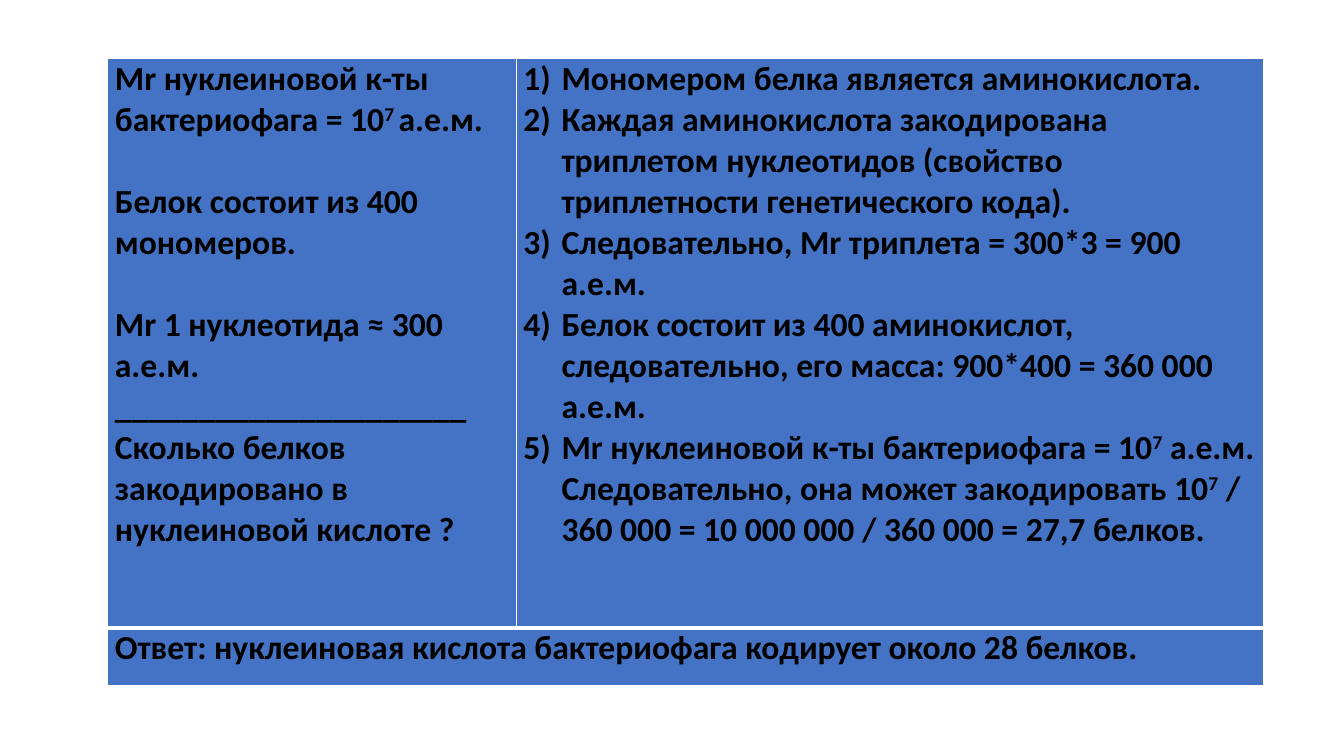
from pptx import Presentation
from pptx import util as u
from pptx.dml.color import RGBColor
from pptx.oxml.ns import qn
from lxml import etree

# Content: text between ^ marks is superscript
GIVEN = [  # (text, starts after a one-line gap)
    ("Mr нуклеиновой к-ты бактериофага = 10^7 ^а.е.м.", False),
    ("Белок состоит из 400 мономеров.", True),
    ("Mr 1 нуклеотида ≈ 300 а.е.м.", True),
    ("_____________________", False),
    ("Сколько белков закодировано в нуклеиновой кислоте ?", False),
]
STEPS = [
    "Мономером белка является аминокислота.",
    "Каждая аминокислота закодирована триплетом нуклеотидов "
    "(свойство триплетности генетического кода).",
    "Следовательно, Mr триплета = 300*3 = 900 а.е.м.",
    "Белок состоит из 400 аминокислот, следовательно, его масса: "
    "900*400 = 360 000 а.е.м.",
    "Mr нуклеиновой к-ты бактериофага = 10^7^ а.е.м. Следовательно, она может "
    "закодировать 10^7^ / 360 000 = 10 000 000 / 360 000 = 27,7 белков.",
]
ANSWER = "Ответ: нуклеиновая кислота бактериофага кодирует около 28 белков."

THEME = {"font": "Calibri", "size": u.Pt(24), "line": u.Pt(29.3),
         "text": RGBColor(0, 0, 0), "fill": RGBColor(0x44, 0x72, 0xC4),
         "border": "FFFFFF", "thin": u.Pt(1), "thick": u.Pt(3)}
LEFT, TOP = 1.07, 0.58
COLS, ROWS = (4.05, 7.41), (5.65, 0.57)
INDENT = u.Inches(0.38)


def add_line(tf, content, first):
    p = tf.paragraphs[0] if first else tf.add_paragraph()
    for i, part in enumerate(content.split("^")):
        r = p.add_run()
        r.text = part
        if i % 2:
            r._r.get_or_add_rPr().set("baseline", "30000")
    f = p.font
    f.name, f.size, f.bold = THEME["font"], THEME["size"], True
    f.color.rgb = THEME["text"]
    return p


def number(p):
    pPr = p._p.get_or_add_pPr()
    pPr.set("marL", str(INDENT))
    pPr.set("indent", str(-INDENT))
    bullet = etree.Element(qn("a:buAutoNum"), type="arabicParenR")
    pPr.insert(0, bullet)


def style_cell(cell, thick_side):
    cell.margin_left = cell.margin_right = u.Inches(0.07)
    cell.margin_top = cell.margin_bottom = 0
    tcPr = cell._tc.get_or_add_tcPr()
    for side in "LRTB":
        width = THEME["thick" if side == thick_side else "thin"]
        ln = etree.SubElement(tcPr, qn("a:ln" + side), w=str(width))
        fill = etree.SubElement(ln, qn("a:solidFill"))
        etree.SubElement(fill, qn("a:srgbClr"), val=THEME["border"])
    cell.fill.solid()
    cell.fill.fore_color.rgb = THEME["fill"]


prs = Presentation()
prs.slide_width, prs.slide_height = u.Inches(13.33), u.Inches(7.5)
s = prs.slides.add_slide(prs.slide_layouts[6])

# Table grid
table = s.shapes.add_table(len(ROWS), len(COLS), u.Inches(LEFT), u.Inches(TOP),
                           u.Inches(sum(COLS)), u.Inches(sum(ROWS))).table
table.first_row = table.horz_banding = False
for col, width in zip(table.columns, COLS):
    col.width = u.Inches(width)
for row, height, thick_side in zip(table.rows, ROWS, "BT"):
    row.height = u.Inches(height)
    for cell in row.cells:
        style_cell(cell, thick_side)
table.cell(1, 0).merge(table.cell(1, 1))

# Given data
for i, (content, gap) in enumerate(GIVEN):
    p = add_line(table.cell(0, 0).text_frame, content, i == 0)
    if gap:
        p.space_before = THEME["line"]

# Numbered solution
for i, content in enumerate(STEPS):
    number(add_line(table.cell(0, 1).text_frame, content, i == 0))

# Answer
add_line(table.cell(1, 0).text_frame, ANSWER, True)

prs.save("out.pptx")
